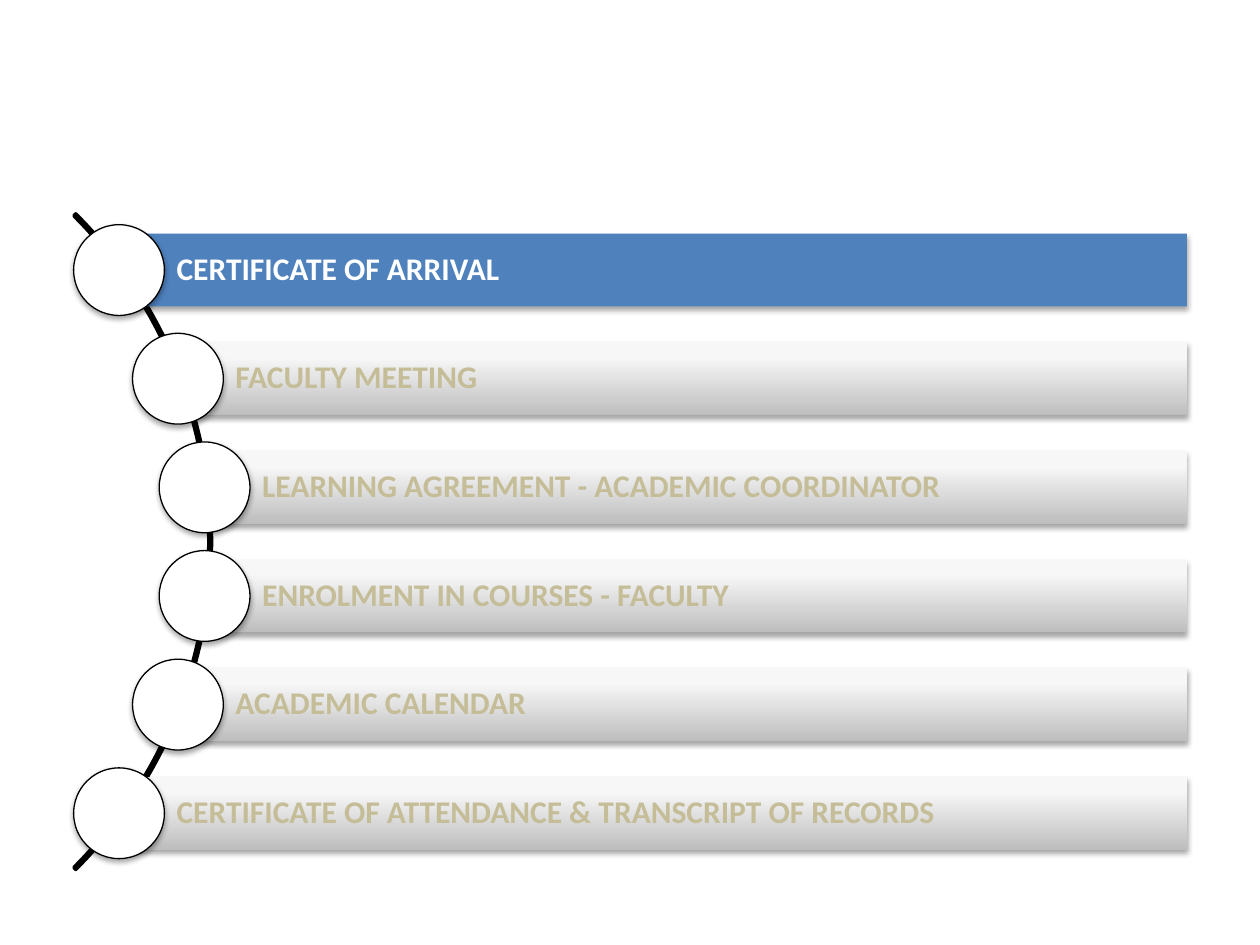
import copy
import dataclasses
import math

import pptx
import pptx.dml.color
import pptx.enum.shapes
import pptx.enum.text
import pptx.oxml
import pptx.oxml.ns
import pptx.util

Cm = pptx.util.Cm
Pt = pptx.util.Pt
rgb = pptx.dml.color.RGBColor.from_string
qn = pptx.oxml.ns.qn
PRESET = pptx.enum.shapes.MSO_SHAPE


@dataclasses.dataclass(frozen=True)
class Theme:
    font: str = "Calibri"
    step_size: float = 18
    current_fill: str = "4F81BD"
    current_text: str = "FFFFFF"
    pending_text: str = "C4BD97"
    pending_stops: tuple = ((0, "BEBEBE"), (0.8, "F7F7F7"), (1, "F8F8F8"))
    outline: str = "000000"
    marker_fill: str = "FFFFFF"


THEME = Theme()
STEPS = (
    "CERTIFICATE OF ARRIVAL",
    "FACULTY MEETING",
    "LEARNING AGREEMENT - ACADEMIC COORDINATOR",
    "ENROLMENT IN COURSES - FACULTY",
    "ACADEMIC CALENDAR",
    "CERTIFICATE OF ATTENDANCE & TRANSCRIPT OF RECORDS",
)
CENTER_X, CENTER_Y = -5.08, 10.92
ARC_DIAMETER = 18.69
MARKER_ORBIT = 9.27
MARKER_SIZE = 1.83
STEP_PITCH = 2.19
BAR_HEIGHT = 1.47
BAR_RIGHT = 23.93


def add_preset(group, preset, left, top, width, height):
    shape = group.shapes.add_shape(preset, Cm(left), Cm(top), Cm(width), Cm(height))
    shape.shadow.inherit = False
    return shape


def add_soft_shadow(shape):
    shadow = pptx.oxml.parse_xml(
        f'<a:outerShdw {pptx.oxml.ns.nsdecls("a")} blurRad="40000" dist="23000"'
        ' dir="5400000" rotWithShape="0"><a:srgbClr val="000000">'
        '<a:alpha val="35000"/></a:srgbClr></a:outerShdw>'
    )
    shape.element.spPr.find(qn("a:effectLst")).append(shadow)


def fill_gradient(shape, stops):
    shape.fill.gradient()
    shape.fill.gradient_angle = 90
    stop_list = next(shape.element.spPr.iter(qn("a:gsLst")))
    stop_list.append(copy.deepcopy(stop_list[-1]))
    for stop, (position, color) in zip(shape.fill.gradient_stops, stops):
        stop.position = position
        stop.color.rgb = rgb(color)


def add_arc(group):
    radius = ARC_DIAMETER / 2
    arc = add_preset(group, PRESET.BLOCK_ARC, CENTER_X - radius, CENTER_Y - radius,
                     ARC_DIAMETER, ARC_DIAMETER)
    for index, value in enumerate((189, 27, 0.003)):
        arc.adjustments[index] = value
    arc.fill.background()
    arc.line.color.rgb = rgb(THEME.outline)
    arc.line.width = Pt(2)


def add_bar(group, label, left, middle, current):
    bar = add_preset(group, PRESET.RECTANGLE, left, middle - BAR_HEIGHT / 2,
                     BAR_RIGHT - left, BAR_HEIGHT)
    if current:
        bar.fill.solid()
        bar.fill.fore_color.rgb = rgb(THEME.current_fill)
    else:
        fill_gradient(bar, THEME.pending_stops)
    bar.line.fill.background()
    add_soft_shadow(bar)

    frame = bar.text_frame
    frame.word_wrap = True
    frame.vertical_anchor = pptx.enum.text.MSO_ANCHOR.MIDDLE
    frame.margin_left = Cm(1.16)
    frame.margin_right = frame.margin_top = frame.margin_bottom = Cm(0.13)
    paragraph = frame.paragraphs[0]
    paragraph.alignment = pptx.enum.text.PP_ALIGN.LEFT
    paragraph.line_spacing = 0.9
    run = paragraph.add_run()
    run.text = label
    run.font.name = THEME.font
    run.font.size = Pt(THEME.step_size)
    run.font.bold = True
    run.font.color.rgb = rgb(THEME.current_text if current else THEME.pending_text)


def add_marker(group, center, middle):
    marker = add_preset(group, PRESET.OVAL, center - MARKER_SIZE / 2,
                        middle - MARKER_SIZE / 2, MARKER_SIZE, MARKER_SIZE)
    marker.fill.solid()
    marker.fill.fore_color.rgb = rgb(THEME.marker_fill)
    marker.line.color.rgb = rgb(THEME.outline)
    marker.line.width = Pt(0.75)
    add_soft_shadow(marker)


def main():
    deck = pptx.Presentation()
    deck.slide_width, deck.slide_height = Cm(25.4), Cm(19.05)
    slide = deck.slides.add_slide(deck.slide_layouts[6])
    timeline = slide.shapes.add_group_shape()
    add_arc(timeline)
    for index, label in enumerate(STEPS):
        offset = (index - (len(STEPS) - 1) / 2) * STEP_PITCH
        center = CENTER_X + math.sqrt(MARKER_ORBIT ** 2 - offset ** 2)
        add_bar(timeline, label, center, CENTER_Y + offset, current=index == 0)
        add_marker(timeline, center, CENTER_Y + offset)
    deck.save("out.pptx")


if __name__ == "__main__":
    main()
